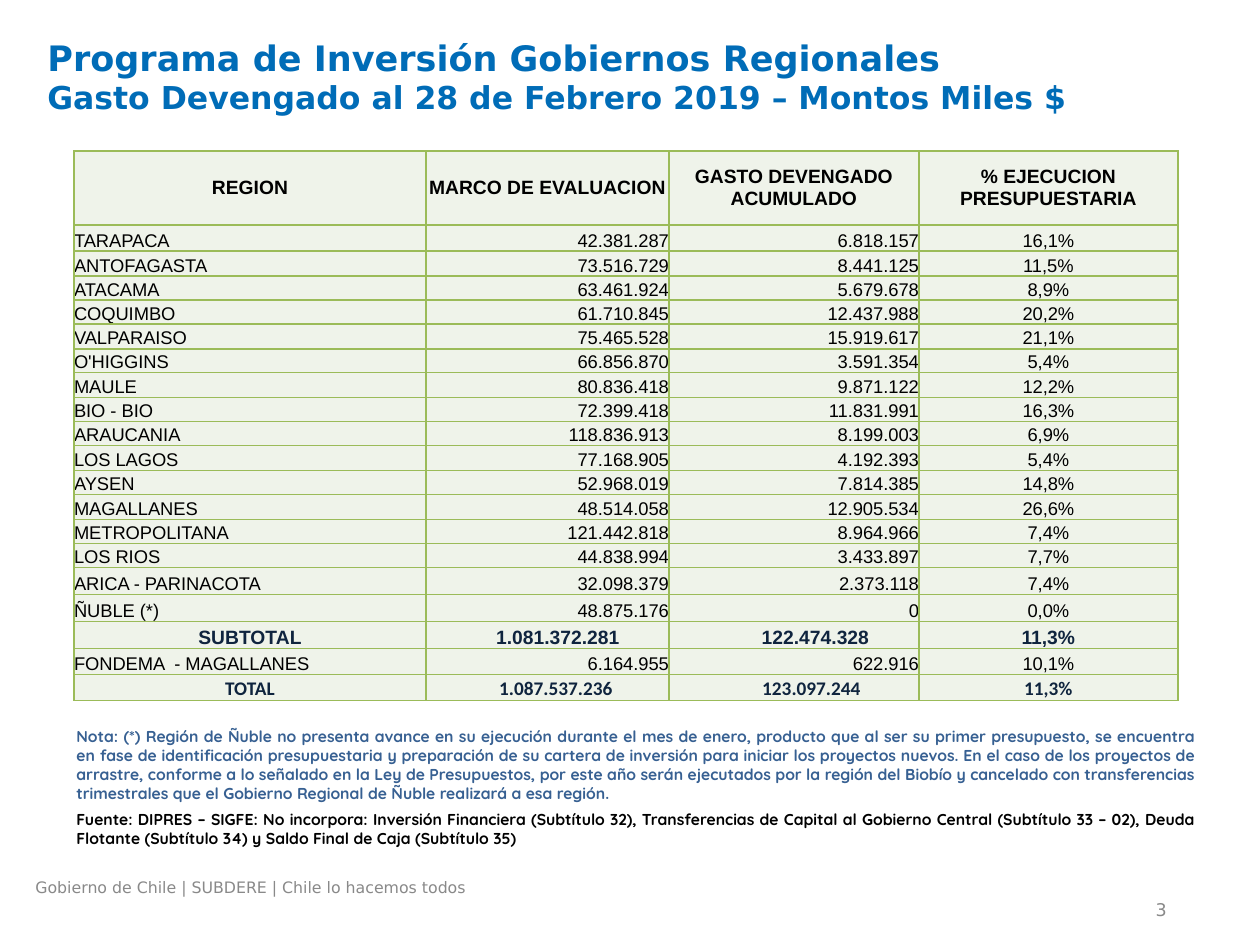
"""Build the regional investment programme slide with its budget execution table."""
from lxml import etree
from pptx import Presentation
from pptx.dml.color import RGBColor
from pptx.enum.text import MSO_ANCHOR, PP_ALIGN
from pptx.oxml.ns import qn
from pptx.util import Pt

PX = 914400 / 126
BLUE = RGBColor(0x00, 0x6C, 0xB7)
GREY = RGBColor(0x89, 0x89, 0x89)
NOTE_BLUE = RGBColor(0x37, 0x60, 0x92)
NAVY = RGBColor(0x0F, 0x24, 0x3E)
BLACK = RGBColor(0x00, 0x00, 0x00)
PALE = RGBColor(0xEF, 0xF3, 0xEA)
GREEN = RGBColor(0x9B, 0xBB, 0x59)

HEADER = ["REGION", "MARCO DE EVALUACION", "GASTO DEVENGADO ACUMULADO", "% EJECUCION PRESUPUESTARIA"]
ROWS = [
    HEADER,
    ["TARAPACA", "42.381.287", "6.818.157", "16,1%"],
    ["ANTOFAGASTA", "73.516.729", "8.441.125", "11,5%"],
    ["ATACAMA", "63.461.924", "5.679.678", "8,9%"],
    ["COQUIMBO", "61.710.845", "12.437.988", "20,2%"],
    ["VALPARAISO", "75.465.528", "15.919.617", "21,1%"],
    ["O'HIGGINS", "66.856.870", "3.591.354", "5,4%"],
    ["MAULE", "80.836.418", "9.871.122", "12,2%"],
    ["BIO - BIO", "72.399.418", "11.831.991", "16,3%"],
    ["ARAUCANIA", "118.836.913", "8.199.003", "6,9%"],
    ["LOS LAGOS", "77.168.905", "4.192.393", "5,4%"],
    ["AYSEN", "52.968.019", "7.814.385", "14,8%"],
    ["MAGALLANES", "48.514.058", "12.905.534", "26,6%"],
    ["METROPOLITANA", "121.442.818", "8.964.966", "7,4%"],
    ["LOS RIOS", "44.838.994", "3.433.897", "7,7%"],
    ["ARICA - PARINACOTA", "32.098.379", "2.373.118", "7,4%"],
    ["ÑUBLE (*)", "48.875.176", "0", "0,0%"],
    ["SUBTOTAL", "1.081.372.281", "122.474.328", "11,3%"],
    ["FONDEMA  - MAGALLANES", "6.164.955", "622.916", "10,1%"],
    ["TOTAL", "1.087.537.236", "123.097.244", "11,3%"],
]
COL_WIDTHS = [352, 243, 250, 259]
ROW_EDGES = [151, 225, 251, 276, 300, 324, 349, 373, 398, 422, 446,
             471, 495, 520, 544, 568, 595, 622, 649, 675, 701]
ALIGNS = [PP_ALIGN.LEFT, PP_ALIGN.RIGHT, PP_ALIGN.RIGHT, PP_ALIGN.CENTER]
SUM_INDENTS = {"SUBTOTAL": [0, 21, 43, 0], "TOTAL": [0, 17, 35, 0]}
NOTES = [
    ("Nota: (*) Región de Ñuble no presenta avance en su ejecución durante el mes de enero, "
     "producto que al ser su primer presupuesto, se encuentra en fase de identificación "
     "presupuestaria y preparación de su cartera de inversión para iniciar los proyectos nuevos. "
     "En el caso de los proyectos de arrastre, conforme a lo señalado en la Ley de Presupuestos, "
     "por este año serán ejecutados por la región del Biobío y cancelado con transferencias "
     "trimestrales que el Gobierno Regional de Ñuble realizará a esa región.", NOTE_BLUE, 0),
    ("Fuente: DIPRES – SIGFE: No incorpora: Inversión Financiera (Subtítulo 32), Transferencias "
     "de Capital al Gobierno Central (Subtítulo 33 – 02), Deuda Flotante (Subtítulo 34) y Saldo "
     "Final de Caja (Subtítulo 35)", BLACK, 4),
]


def px(n):
    return round(n * PX)


def style(p, name, size, color, bold=False, align=PP_ALIGN.LEFT):
    p.alignment = align
    p.font.name = name
    p.font.size = Pt(size)
    p.font.bold = bold
    p.font.color.rgb = color


prs = Presentation()
prs.slide_width, prs.slide_height = px(1260), px(945)
s = prs.slides.add_slide(prs.slide_layouts[6])

tf = s.shapes.add_textbox(px(885), px(897), px(294), px(26)).text_frame
tf.word_wrap = True
tf.vertical_anchor = MSO_ANCHOR.MIDDLE
tf.text = "3"
style(tf.paragraphs[0], "DejaVu Sans", 10, GREY, align=PP_ALIGN.RIGHT)

tf = s.shapes.add_textbox(px(35), px(30), px(1096), px(118)).text_frame
tf.word_wrap = True
p = tf.paragraphs[0]
style(p, "DejaVu Sans", 20, BLUE, True)
p.add_run().text = "Programa de Inversión Gobiernos Regionales"
p.add_line_break()
r = p.add_run()
r.text = "Gasto Devengado al 28 de Febrero 2019 – Montos Miles $"
r.font.size = Pt(18)

tf = s.shapes.add_textbox(px(23), px(872), px(816), px(34)).text_frame
tf.word_wrap = True
tf.text = "Gobierno de Chile | SUBDERE | Chile lo hacemos todos"
style(tf.paragraphs[0], "DejaVu Sans", 9, GREY)

tf = s.shapes.add_textbox(px(64), px(721), px(1142), px(137)).text_frame
tf.word_wrap = True
for i, (text, color, gap) in enumerate(NOTES):
    p = tf.add_paragraph() if i else tf.paragraphs[0]
    p.text = text
    style(p, "Quicksand", 9, color, True, PP_ALIGN.JUSTIFY)
    p.space_before = Pt(gap)

table = s.shapes.add_table(len(ROWS), len(COL_WIDTHS), px(74), px(ROW_EDGES[0]), px(sum(COL_WIDTHS)),
                           px(ROW_EDGES[-1] - ROW_EDGES[0])).table
for col, width in zip(table.columns, COL_WIDTHS):
    col.width = px(width)
for row, top, bottom in zip(table.rows, ROW_EDGES, ROW_EDGES[1:]):
    row.height = px(bottom - top)

for i, values in enumerate(ROWS):
    is_header = i == 0
    is_sum = values[0] in SUM_INDENTS
    strong = is_header or is_sum
    indents = SUM_INDENTS.get(values[0], [0] * 4)
    for j, value in enumerate(values):
        cell = table.cell(i, j)
        cell.margin_right = cell.margin_top = cell.margin_bottom = 0
        cell.margin_left = px(indents[j])
        cell.vertical_anchor = MSO_ANCHOR.MIDDLE if is_header else MSO_ANCHOR.BOTTOM
        cell.text = value
        style(cell.text_frame.paragraphs[0], "Calibri" if values[0] == "TOTAL" else "Arial",
              11 if strong else 10.5, NAVY if is_sum else BLACK, strong,
              PP_ALIGN.CENTER if strong else ALIGNS[j])
        tcPr = cell._tc.get_or_add_tcPr()
        for side in ("a:lnL", "a:lnR", "a:lnT", "a:lnB"):
            ln = etree.SubElement(tcPr, qn(side), w=str(Pt(1)))
            fill = etree.SubElement(ln, qn("a:solidFill"))
            etree.SubElement(fill, qn("a:srgbClr"), val=str(GREEN))
        cell.fill.solid()
        cell.fill.fore_color.rgb = PALE

prs.save("out.pptx")
